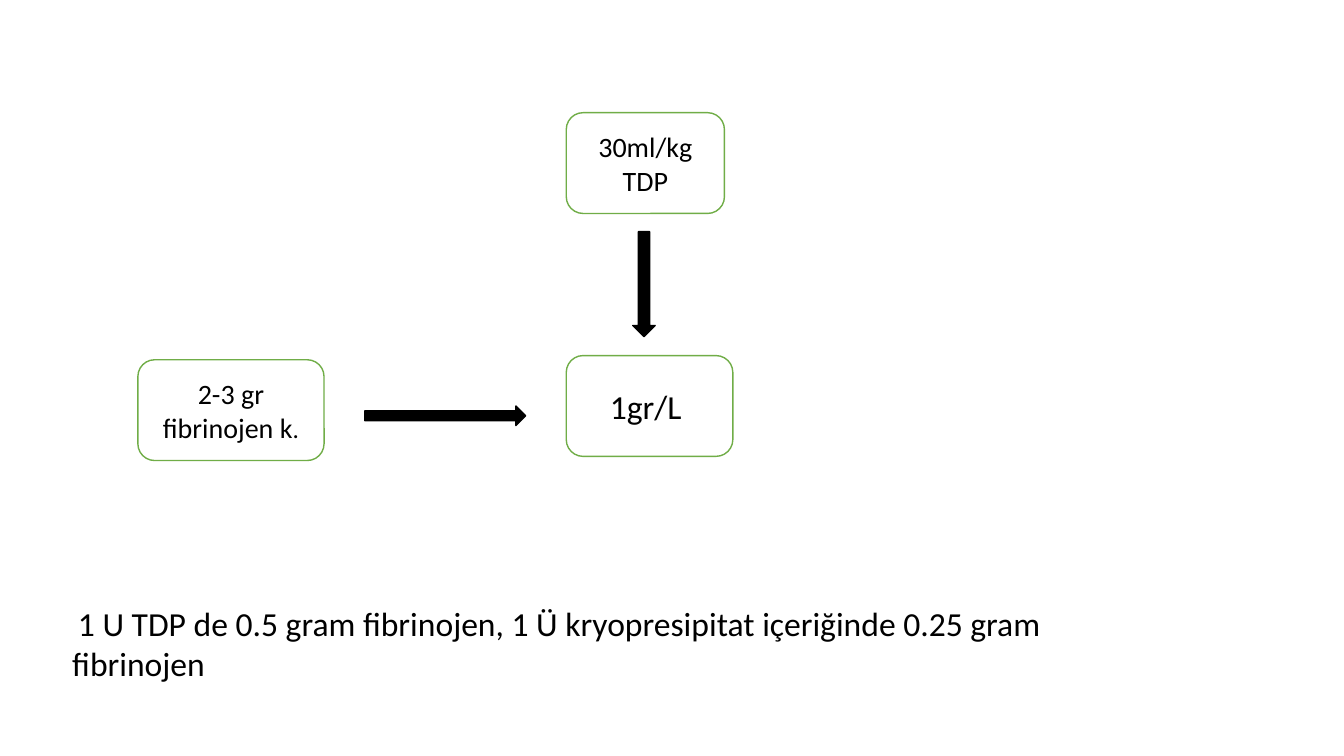
from pptx import Presentation
from pptx.dml.color import RGBColor
from pptx.enum.shapes import MSO_SHAPE
from pptx.enum.text import MSO_ANCHOR, PP_ALIGN
from pptx.util import Pt

BLACK, WHITE, GREEN = "000000", "FFFFFF", "70AD47"


def paint(fmt, color):
    fmt.solid()
    fmt.fore_color.rgb = RGBColor.from_string(color)


def write(para, *runs):
    """Add (text, size) runs to a paragraph."""
    for text, size in runs:
        run = para.add_run()
        run.text = text
        for key, value in {"name": "Calibri", "size": Pt(size)}.items():
            setattr(run.font, key, value)
        paint(run.font.fill, BLACK)


def add_form(slide, kind, place, fill, line):
    form = slide.shapes.add_shape(kind, *map(Pt, place))
    form.shadow.inherit = False
    paint(form.fill, fill)
    paint(form.line.fill, line)
    form.line.width = Pt(1)
    return form


def add_box(slide, place, *runs):
    box = add_form(slide, MSO_SHAPE.ROUNDED_RECTANGLE, place, WHITE, GREEN)
    frame = box.text_frame
    for key, value in {"word_wrap": True,
                       "vertical_anchor": MSO_ANCHOR.MIDDLE}.items():
        setattr(frame, key, value)
    para = frame.paragraphs[0]
    para.alignment = PP_ALIGN.CENTER
    write(para, *runs)


def add_arrow(slide, kind, place):
    add_form(slide, kind, place, BLACK, BLACK)


def add_note(slide, place, *runs):
    frame = slide.shapes.add_textbox(*map(Pt, place)).text_frame
    frame.word_wrap = True
    write(frame.paragraphs[0], *runs)


def main():
    deck = Presentation()
    deck.slide_width, deck.slide_height = Pt(960), Pt(540)
    slide = deck.slides.add_slide(deck.slide_layouts[6])

    add_box(slide, (404.5, 254, 119, 72), ("1gr/L ", 24))
    add_box(slide, (404.5, 80.5, 113, 72), ("30ml/kg TDP", 20))
    add_arrow(slide, MSO_SHAPE.DOWN_ARROW, (452, 165.5, 16, 75))
    add_box(slide, (98.5, 257, 133, 72),
            ("2-3 gr fibrinojen k", 20), (".", 18))
    add_arrow(slide, MSO_SHAPE.RIGHT_ARROW, (260.5, 290, 115, 14))
    add_note(slide, (44.5, 427, 798.5, 36), (" ", 18),
             ("1 U TDP de 0.5 gram fibrinojen, 1 Ü kryopresipitat "
              "içeriğinde 0.25 gram fibrinojen", 24))
    deck.save("out.pptx")


if __name__ == "__main__":
    main()
